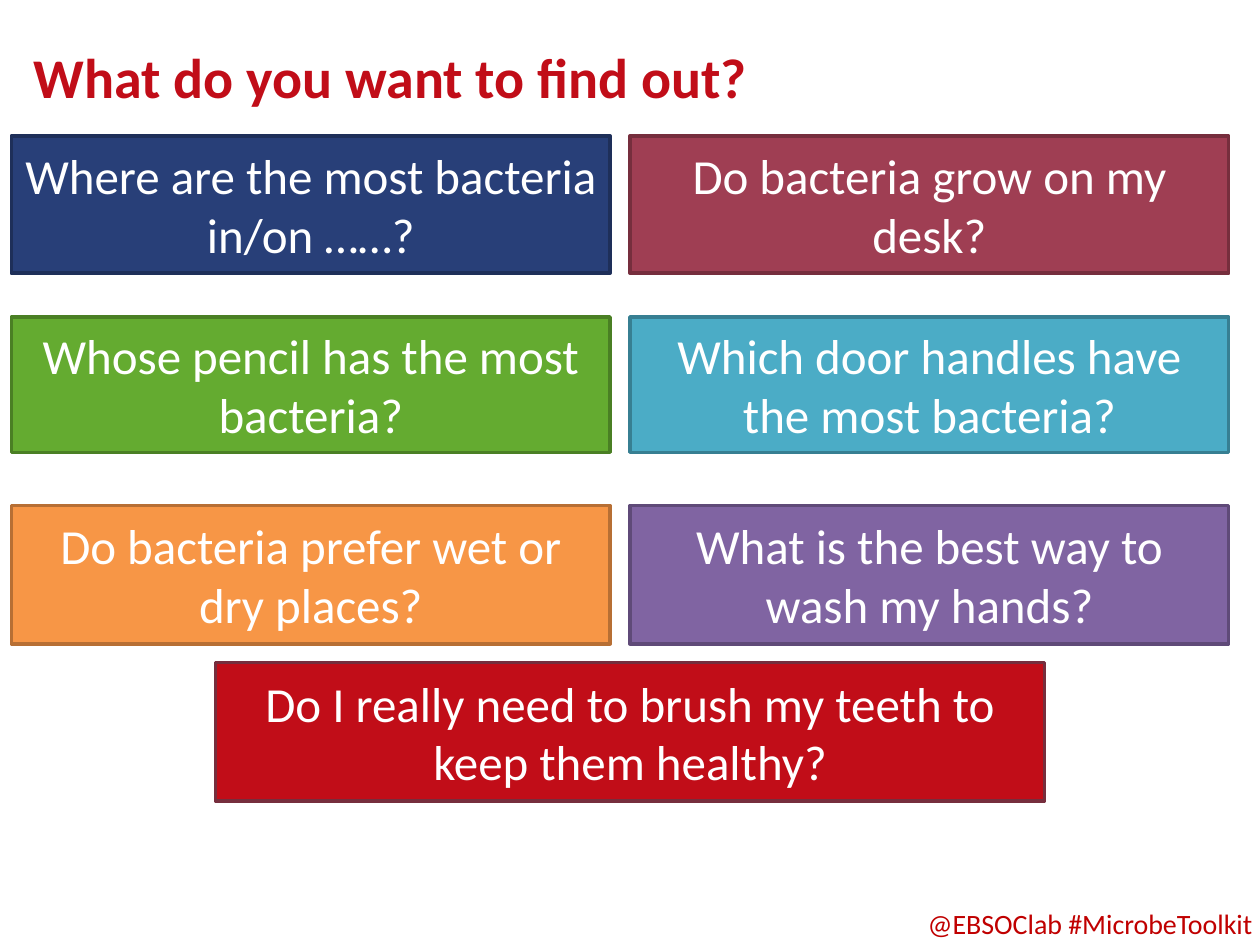
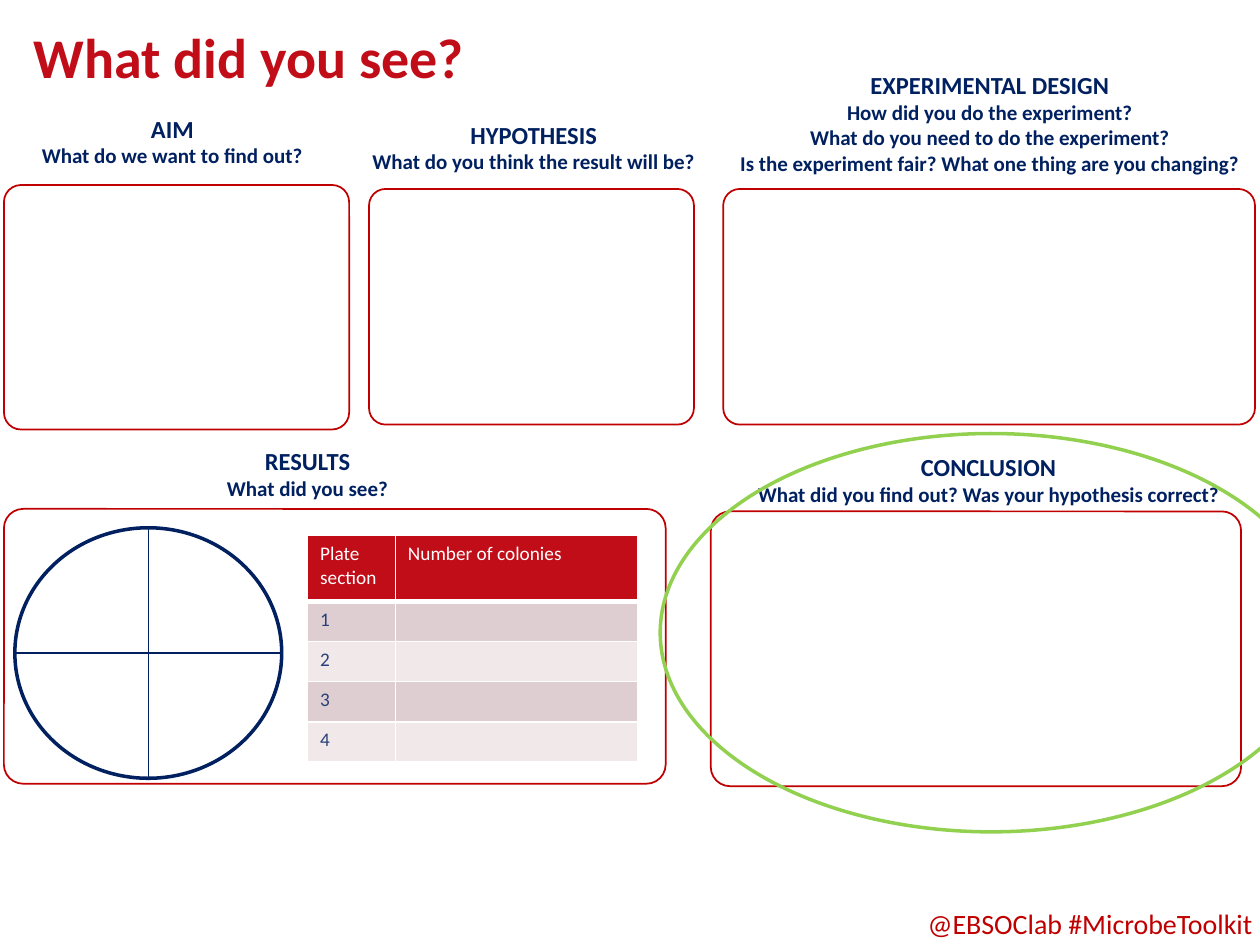
from dataclasses import dataclass

from lxml import etree
from pptx import Presentation
from pptx.dml.color import RGBColor
from pptx.enum.shapes import MSO_CONNECTOR, MSO_SHAPE
from pptx.enum.text import MSO_ANCHOR, PP_ALIGN
from pptx.oxml.ns import qn
from pptx.util import Cm, Pt

RECT, ROUND, OVAL = MSO_SHAPE.RECTANGLE, MSO_SHAPE.ROUNDED_RECTANGLE, MSO_SHAPE.OVAL
LEFT, CENTER, RIGHT = PP_ALIGN.LEFT, PP_ALIGN.CENTER, PP_ALIGN.RIGHT
TOP, MIDDLE = MSO_ANCHOR.TOP, MSO_ANCHOR.MIDDLE
STRAIGHT = MSO_CONNECTOR.STRAIGHT


@dataclass(frozen=True)
class Theme:
    font: str = "Calibri"
    red: str = "C10D18"
    outline: str = "C00000"
    navy: str = "002060"
    blue: str = "283F78"
    green: str = "92D050"
    white: str = "FFFFFF"
    bands: tuple = ("DFCED1", "F0E8E9")
    title: int = 32
    question: int = 28
    footer: int = 16
    heading: int = 14
    prompt: int = 12
    cell: int = 11


T = Theme()
SLIDE_W, SLIDE_H = 25.4, 19.05
FOOTER = "@EBSOClab #MicrobeToolkit"

QUESTION_TITLE = "What do you want to find out?"
QUESTION_ROWS = [(2.74, 2.77), (6.39, 2.73), (10.19, 2.79)]
QUESTION_LEFTS, QUESTION_W = (0.23, 12.7), 12.07
QUESTIONS = [
    ("Where are the most bacteria in/on ……?", "283F78", "1E2F59"),
    ("Do bacteria grow on my desk?", "9F3E53", "762E3D"),
    ("Whose pencil has the most bacteria?", "64AB30", "4A7F24"),
    ("Which door handles have the most bacteria?", "4BACC6", "377F92"),
    ("Do bacteria prefer wet or dry places?", "F79646", "B76F34"),
    ("What is the best way to wash my hands?", "8064A2", "5F4A78"),
]
LAST_QUESTION = ("Do I really need to brush my teeth to keep them healthy?", T.red, "762E3D")
LAST_TOP, LAST_W, LAST_H = 13.36, 16.71, 2.79

REPORT_TITLE = "What did you see?"
SECTIONS = [
    (["AIM", "What do we want to find out?"],
     (0.81, 2.29, 5.33), (0.08, 3.73, 6.96, 4.93)),
    (["HYPOTHESIS", "What do you think the result will be?"],
     (7.47, 2.41, 6.58), (7.44, 3.81, 6.55, 4.75)),
    (["EXPERIMENTAL DESIGN", "How did you do the experiment?",
      "What do you need to do the experiment?",
      "Is the experiment fair? What one thing are you changing?"],
     (14.86, 1.42, 10.19), (14.58, 3.81, 10.72, 4.75)),
    (["RESULTS", "What did you see?"],
     (4.55, 8.99, 3.3), (0.08, 10.26, 13.34, 5.54)),
    (["CONCLUSION", "What did you find out? Was your hypothesis correct?"],
     (15.22, 9.12, 9.42), (14.33, 10.31, 10.69, 5.54)),
]
LINE_H = 0.54
PLATE = (0.3, 10.64, 5.38, 5.05)
HIGHLIGHT = (13.31, 8.74, 13.34, 8.03)
COLONIES = [["Plate section", "Number of colonies"], ["1", ""], ["2", ""], ["3", ""], ["4", ""]]
TABLE_AT = (6.2, 10.8)
COL_WIDTHS = (1.77, 4.88)
HEAD_H, ROW_H = 1.32, 0.81


def rgb(value):
    return RGBColor.from_string(value)


def cms(values):
    return [Cm(v) for v in values]


def format_text(p, size, color, align=LEFT, bold=False):
    p.alignment = align
    for r in p.runs:
        r.font.name = T.font
        r.font.size = Pt(size)
        r.font.bold = bold
        r.font.color.rgb = rgb(color)


def add_box(s, kind, box, line, width, fill=None):
    sp = s.shapes.add_shape(kind, *cms(box))
    sp.shadow.inherit = False
    if fill:
        sp.fill.solid()
        sp.fill.fore_color.rgb = rgb(fill)
    else:
        sp.fill.background()
    sp.line.color.rgb = rgb(line)
    sp.line.width = Pt(width)
    return sp


def add_question(s, question, box):
    text, fill, line = question
    sp = add_box(s, RECT, box, line, 2, fill)
    tf = sp.text_frame
    tf.word_wrap = True
    tf.vertical_anchor = MIDDLE
    tf.text = text
    format_text(tf.paragraphs[0], T.question, T.white, CENTER)


def add_line(s, x1, y1, x2, y2):
    line = s.shapes.add_connector(STRAIGHT, *cms((x1, y1, x2, y2)))
    line.line.color.rgb = rgb(T.navy)
    line.line.width = Pt(0.75)
    etree.SubElement(line._element.spPr, qn("a:effectLst"))


def add_section(s, lines, label, box):
    left, top, width = label
    sp = s.shapes.add_textbox(*cms((left, top, width, LINE_H * len(lines))))
    tf = sp.text_frame
    tf.word_wrap = False
    tf.margin_left = tf.margin_right = tf.margin_top = tf.margin_bottom = 0
    tf.text = "\n".join(lines)
    for i, p in enumerate(tf.paragraphs):
        format_text(p, T.prompt if i else T.heading, T.navy, CENTER, True)
    add_box(s, ROUND, box, T.outline, 1, T.white).adjustments[0] = 0.07


def add_plate(s):
    left, top, width, height = PLATE
    add_box(s, OVAL, PLATE, T.navy, 2)
    mid_x, mid_y = left + width / 2, top + height / 2
    add_line(s, mid_x, top, mid_x, top + height)
    add_line(s, left, mid_y, left + width, mid_y)


def add_borders(cell, bottom):
    tc_pr = cell._tc.get_or_add_tcPr()
    for side, width in (("L", 1), ("R", 1), ("T", 1), ("B", bottom)):
        ln = etree.SubElement(tc_pr, qn("a:ln" + side), w=str(Pt(width)))
        fill = etree.SubElement(ln, qn("a:solidFill"))
        etree.SubElement(fill, qn("a:srgbClr"), val=T.white)


def add_colony_table(s):
    heights = [HEAD_H] + [ROW_H] * (len(COLONIES) - 1)
    size = (sum(COL_WIDTHS), sum(heights))
    table = s.shapes.add_table(len(COLONIES), len(COL_WIDTHS), *cms(TABLE_AT + size)).table
    for col, width in zip(table.columns, COL_WIDTHS):
        col.width = Cm(width)
    for i, values in enumerate(COLONIES):
        table.rows[i].height = Cm(heights[i])
        for j, value in enumerate(values):
            cell = table.cell(i, j)
            add_borders(cell, 1 if i else 3)
            cell.fill.solid()
            cell.fill.fore_color.rgb = rgb(T.bands[(i - 1) % 2] if i else T.red)
            cell.text = value
            p = cell.text_frame.paragraphs[0]
            format_text(p, T.cell, T.blue if i else T.white)
            if not value:
                etree.SubElement(p._p, qn("a:endParaRPr"), sz=str(T.cell * 100))


def add_slide(prs, title, title_top):
    s = prs.slides.add_slide(prs.slide_layouts[5])
    sp = s.shapes.title
    sp.left, sp.top, sp.width, sp.height = cms((0.43, title_top, 23.04, 1.8))
    tf = sp.text_frame
    tf.vertical_anchor = MIDDLE
    tf.text = title
    format_text(tf.paragraphs[0], T.title, T.red, LEFT, True)
    tf = s.shapes.add_textbox(*cms((16.41, 18.16, 9.09, 0.94))).text_frame
    tf.word_wrap = True
    tf.vertical_anchor = TOP
    tf.text = FOOTER
    format_text(tf.paragraphs[0], T.footer, T.outline, RIGHT)
    return s


def build_questions(prs):
    s = add_slide(prs, QUESTION_TITLE, 0.64)
    for i, question in enumerate(QUESTIONS):
        row, col = divmod(i, 2)
        top, height = QUESTION_ROWS[row]
        add_question(s, question, (QUESTION_LEFTS[col], top, QUESTION_W, height))
    add_question(s, LAST_QUESTION, ((SLIDE_W - LAST_W) / 2, LAST_TOP, LAST_W, LAST_H))


def build_report(prs):
    s = add_slide(prs, REPORT_TITLE, 0.23)
    for lines, label, box in SECTIONS:
        add_section(s, lines, label, box)
    add_plate(s)
    add_colony_table(s)
    add_box(s, OVAL, HIGHLIGHT, T.green, 2)


def main():
    prs = Presentation()
    prs.slide_width, prs.slide_height = Cm(SLIDE_W), Cm(SLIDE_H)
    build_questions(prs)
    build_report(prs)
    prs.save("out.pptx")


if __name__ == "__main__":
    main()
